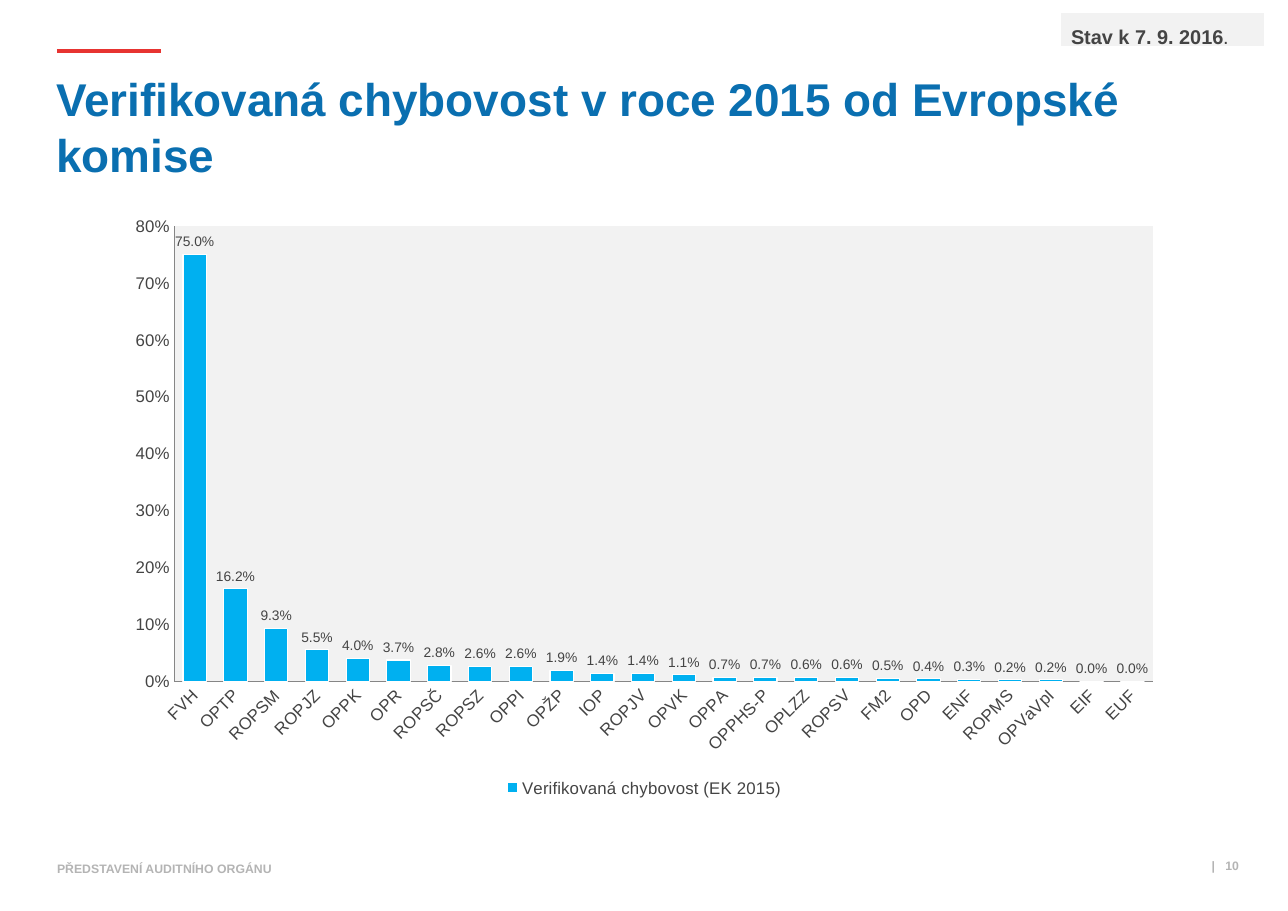
import pptx
import pptx.chart.data
import pptx.dml.color
import pptx.enum.chart
import pptx.enum.shapes
import pptx.enum.text
import pptx.oxml
import pptx.oxml.ns
import pptx.util

RGB = pptx.dml.color.RGBColor
BLUE = RGB(0x0A, 0x6F, 0xB0)
CYAN = RGB(0x00, 0xB0, 0xF0)
RED = RGB(0xE7, 0x34, 0x31)
DARK = RGB(0x44, 0x44, 0x44)
AXIS_GRAY = RGB(0x86, 0x86, 0x86)
FOOTER_GRAY = RGB(0xB4, 0xB4, 0xB4)
PALE = RGB(0xF2, 0xF2, 0xF2)
WHITE = RGB(0xFF, 0xFF, 0xFF)
LEFT = pptx.enum.text.PP_ALIGN.LEFT
RIGHT = pptx.enum.text.PP_ALIGN.RIGHT
TOP = pptx.enum.text.MSO_ANCHOR.TOP
MIDDLE = pptx.enum.text.MSO_ANCHOR.MIDDLE
FONT = "Arial"
EMU_PER_PX = 8298

TITLE = "Verifikovaná chybovost v roce 2015 od Evropské komise"
STATUS = ("Stav k 7. 9. 2016", ".")
FOOTERS = [
    ("PŘEDSTAVENÍ AUDITNÍHO ORGÁNU", (57, 862, 458, 14), LEFT),
    ("|", (1195, 859, 20, 14), RIGHT),
    ("10", (1215, 859, 24, 14), RIGHT),
]
SERIES = "Verifikovaná chybovost (EK 2015)"
ERROR_RATES = {
    "FVH": 75, "OPTP": 16.2, "ROPSM": 9.3, "ROPJZ": 5.5, "OPPK": 4, "OPR": 3.7,
    "ROPSČ": 2.8, "ROPSZ": 2.6, "OPPI": 2.6, "OPŽP": 1.9, "IOP": 1.4, "ROPJV": 1.4,
    "OPVK": 1.1, "OPPA": 0.7, "OPPHS-P": 0.7, "OPLZZ": 0.6, "ROPSV": 0.6, "FM2": 0.5,
    "OPD": 0.4, "ENF": 0.3, "ROPMS": 0.2, "OPVaVpI": 0.2, "EIF": 0, "EUF": 0,
}
CHART_BOX = (115, 204, 1059, 598)
PLOT_BOX = (174, 226, 978, 455)


def px(*lengths):
    return [pptx.util.Emu(length * EMU_PER_PX) for length in lengths]


def set_font(font, size, color, bold=False):
    font.name = FONT
    font.size = pptx.util.Pt(size)
    font.bold = bold
    font.color.rgb = color


def add_text(page, text, place, size, color, align=LEFT, anchor=TOP):
    frame = page.shapes.add_textbox(*px(*place)).text_frame
    frame.word_wrap = True
    frame.vertical_anchor = anchor
    frame.margin_left = frame.margin_right = frame.margin_top = frame.margin_bottom = 0
    para = frame.paragraphs[0]
    para.text = text
    para.alignment = align
    set_font(para.font, size, color, True)
    return para


def add_accent(page):
    accent = page.shapes.add_connector(
        pptx.enum.shapes.MSO_CONNECTOR.STRAIGHT, *px(57, 51, 161, 51))
    accent.line.color.rgb = RED
    accent.line.width = pptx.util.Pt(2)
    properties = accent._element.spPr
    properties.append(properties.makeelement(pptx.oxml.ns.qn("a:effectLst"), {}))


def add_status(page):
    box = page.shapes.add_shape(
        pptx.enum.shapes.MSO_SHAPE.RECTANGLE, *px(1061, 13, 203, 33))
    box.shadow.inherit = False
    box.fill.solid()
    box.fill.fore_color.rgb = PALE
    box.line.fill.background()
    frame = box.text_frame
    frame.vertical_anchor = TOP
    frame.margin_left, frame.margin_top = px(10, 12)
    frame.margin_bottom = 0
    para = frame.paragraphs[0]
    para.alignment = LEFT
    for text, bold in zip(STATUS, (True, False)):
        span = para.add_run()
        span.text = text
        set_font(span.font, 13, DARK, bold)


def style_plot(chart):
    left, top, width, height = CHART_BOX
    plot_left, plot_top, plot_width, plot_height = PLOT_BOX
    shares = {
        "x": (plot_left - left) / width, "y": (plot_top - top) / height,
        "w": plot_width / width, "h": plot_height / height,
    }
    modes = '<c:layoutTarget val="inner"/><c:xMode val="edge"/><c:yMode val="edge"/>'
    sizes = "".join(f'<c:{key} val="{share:.3f}"/>' for key, share in shares.items())
    names = pptx.oxml.ns.nsdecls("c", "a")
    plot_area = chart._chartSpace.chart.plotArea
    for layout in plot_area.findall(pptx.oxml.ns.qn("c:layout")):
        plot_area.remove(layout)
    plot_area.insert(0, pptx.oxml.parse_xml(
        f"<c:layout {names}><c:manualLayout>{modes}{sizes}</c:manualLayout></c:layout>"))
    plot_area.append(pptx.oxml.parse_xml(
        f'<c:spPr {names}><a:solidFill><a:srgbClr val="{PALE}"/></a:solidFill>'
        "<a:ln><a:noFill/></a:ln></c:spPr>"))


def add_error_chart(page):
    data = pptx.chart.data.CategoryChartData()
    data.categories = list(ERROR_RATES)
    data.add_series(SERIES, list(ERROR_RATES.values()))
    chart = page.shapes.add_chart(
        pptx.enum.chart.XL_CHART_TYPE.COLUMN_CLUSTERED, *px(*CHART_BOX), data).chart
    set_font(chart.font, 11, DARK)
    chart.has_title = False
    chart.has_legend = True
    chart.legend.position = pptx.enum.chart.XL_LEGEND_POSITION.BOTTOM
    chart.legend.include_in_layout = False

    for axis in (chart.category_axis, chart.value_axis):
        axis.major_tick_mark = pptx.enum.chart.XL_TICK_MARK.NONE
        axis.has_major_gridlines = False
        axis.format.line.color.rgb = AXIS_GRAY
        axis.format.line.width = pptx.util.Pt(0.75)
    chart.category_axis.tick_labels.font.size = pptx.util.Pt(11)
    chart.category_axis._element.txPr.bodyPr.set("rot", "-2700000")
    rates = chart.value_axis
    rates.minimum_scale, rates.maximum_scale, rates.major_unit = 0, 80, 10
    rates.tick_labels.number_format = r"#,##0\%"
    rates.tick_labels.number_format_is_linked = False

    plot = chart.plots[0]
    plot.gap_width = 75
    plot.vary_by_categories = False
    columns = plot.series[0].format
    columns.fill.solid()
    columns.fill.fore_color.rgb = CYAN
    columns.line.color.rgb = WHITE
    columns.line.width = pptx.util.Pt(0.75)
    plot.has_data_labels = True
    labels = plot.data_labels
    labels.show_value = True
    labels.number_format = r"#,##0.0\%"
    labels.number_format_is_linked = False
    labels.position = pptx.enum.chart.XL_LABEL_POSITION.OUTSIDE_END
    set_font(labels.font, 9, DARK)
    style_plot(chart)


def main():
    deck = pptx.Presentation()
    deck.slide_width, deck.slide_height = px(1288, 911)
    page = deck.slides.add_slide(deck.slide_layouts[6])
    add_accent(page)
    title = add_text(page, TITLE, (56, 71, 1083, 111), 30, BLUE)
    title.line_spacing = pptx.util.Pt(36)
    for text, place, align in FOOTERS:
        add_text(page, text, place, 8, FOOTER_GRAY, align, MIDDLE)
    add_error_chart(page)
    add_status(page)
    deck.save("out.pptx")


if __name__ == "__main__":
    main()
